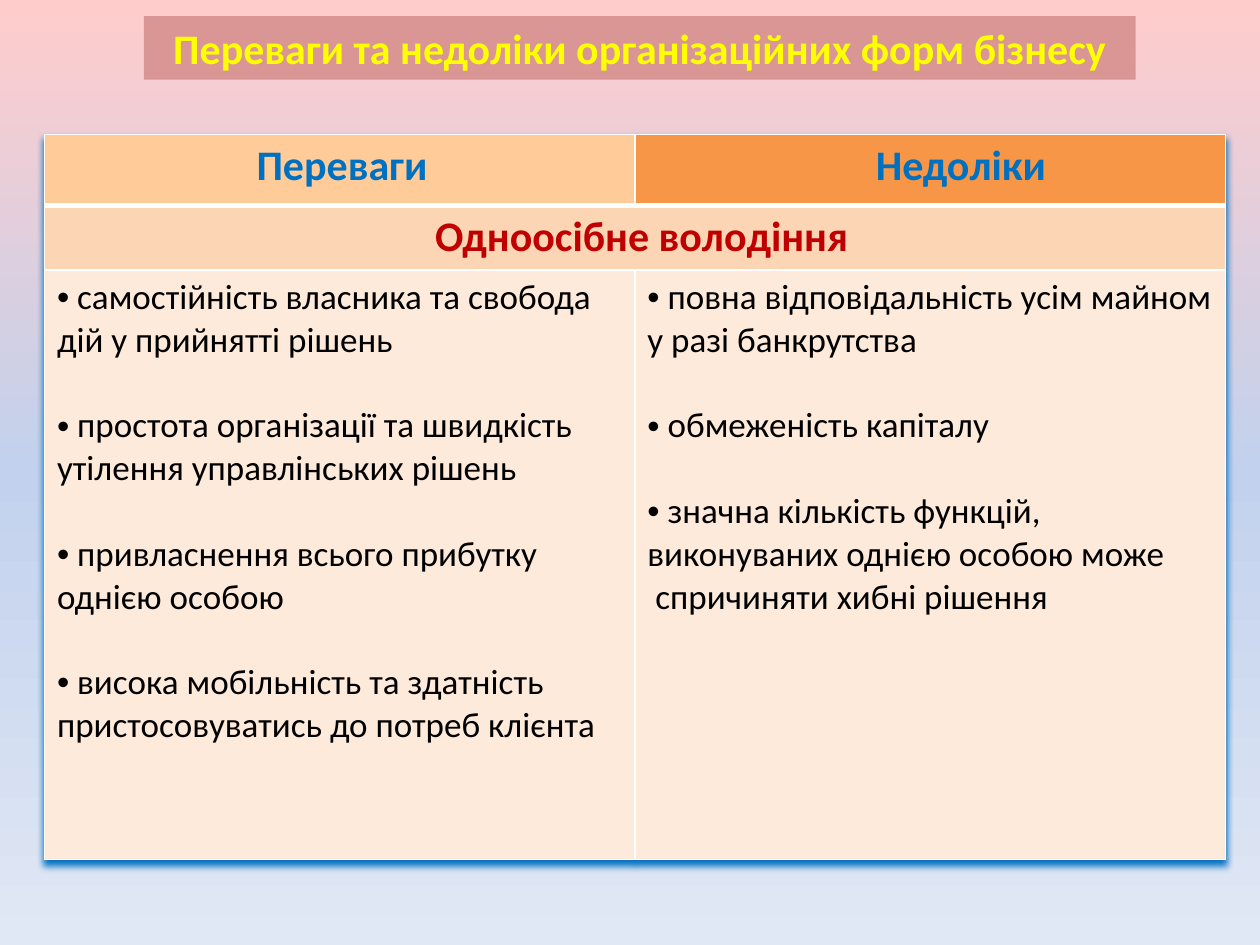
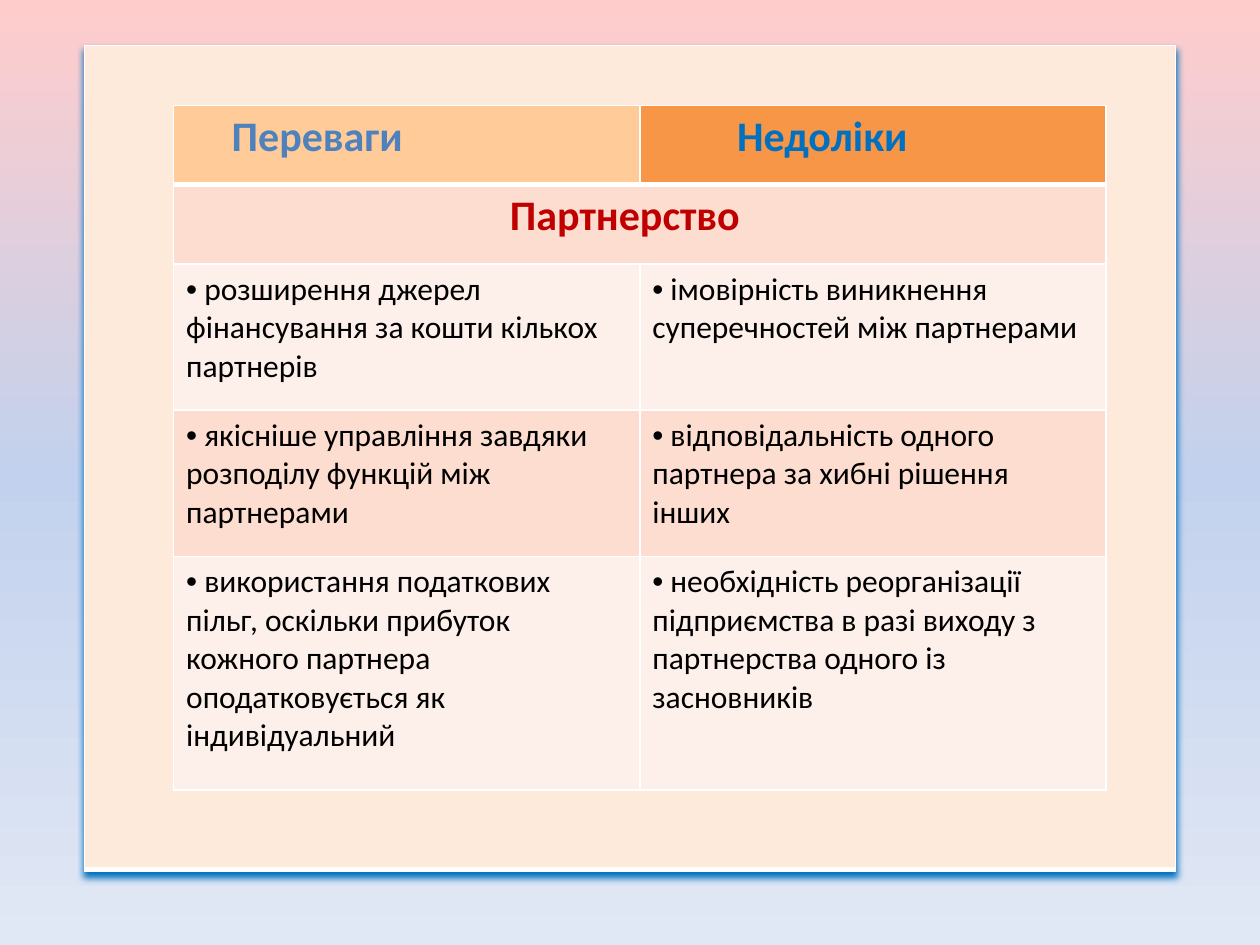
from lxml import etree
from pptx import Presentation
from pptx.dml.color import RGBColor
from pptx.enum.shapes import MSO_SHAPE
from pptx.enum.text import MSO_ANCHOR, PP_ALIGN
from pptx.oxml.ns import qn
from pptx.util import Pt

RECTANGLE = MSO_SHAPE.RECTANGLE
CENTER, MIDDLE = PP_ALIGN.CENTER, MSO_ANCHOR.MIDDLE

# Shared look
FONT = "Calibri"
HEADING_SIZE = 24
COLORS = {
    "title": "FFFF00", "title_band": "D99694",
    "blue": "0070C0", "soft_blue": "4F81BD", "red": "C00000", "text": "000000",
    "pros": "FFCC99", "cons": "F79646", "line": "FFFFFF", "shadow": "0070C0",
    "form": "FCD5B5", "cream": "FDEADA", "rose": "FCDDCF", "pale_rose": "FDEFE9",
}
BACKGROUND_STOPS = [(0, "FFCCCC"), (50, "C2D1ED"), (100, "E1E8F5")]

# Content: headings are (text, colour, indent, fill)
TITLE = "Переваги та недоліки організаційних форм бізнесу"
SOLE_OWNERSHIP = {
    "left": 25.4, "top": 77, "column": 337.4, "rows": [40.4, 36.8, 337],
    "headings": [("Переваги", "blue", 114, "pros"), ("Недоліки", "blue", 130.5, "cons")],
    "form": ("Одноосібне володіння", "red", 216, "form"),
    "size": 20, "bands": ["cream"], "shadow": True,
    "points": [(
        ["самостійність власника та свобода дій у прийнятті рішень",
         "простота організації та швидкість утілення управлінських рішень",
         "привласнення всього прибутку однією особою",
         "висока мобільність та здатність пристосовуватись до потреб клієнта"],
        ["повна відповідальність усім майном у разі банкрутства",
         "обмеженість капіталу",
         "значна кількість функцій, виконуваних однією особою може"],
    )],
    "ending": "спричиняти хибні рішення",
}
PARTNERSHIP = {
    "left": 99.2, "top": 60.4, "column": 266.4, "rows": [45.2, 45.2, 83.6, 83.6, 133.4],
    "headings": [("Переваги", "soft_blue", 26, "pros"), ("Недоліки", "blue", 48.5, "cons")],
    "form": ("Партнерство", "red", 185, "rose"),
    "size": 18, "bands": ["pale_rose", "rose"], "shadow": False,
    "points": [
        (["розширення джерел фінансування за кошти кількох партнерів"],
         ["імовірність виникнення суперечностей між партнерами"]),
        (["якісніше управління завдяки розподілу функцій між партнерами"],
         ["відповідальність одного партнера за хибні рішення інших"]),
        (["використання податкових пільг, оскільки прибуток кожного партнера "
          "оподатковується як індивідуальний"],
         ["необхідність реорганізації підприємства в разі виходу з партнерства "
          "одного із засновників"]),
    ],
}


def rgb(name):
    return RGBColor.from_string(COLORS[name])


def add_color(parent, value):
    fill = etree.SubElement(parent, qn("a:solidFill"))
    etree.SubElement(fill, qn("a:srgbClr"), val=value)


def style(paragraph, size, color, bold=False):
    font = paragraph.font
    font.name, font.size, font.bold = FONT, Pt(size), bold
    font.color.rgb = rgb(color)


def new_slide(prs):
    slide = prs.slides.add_slide(prs.slide_layouts[6])
    fill = slide.background.fill
    fill.gradient()
    fill.gradient_angle = 270
    stops = next(slide.element.iter(qn("a:gsLst")))
    for stop in list(stops):
        stops.remove(stop)
    for percent, value in BACKGROUND_STOPS:
        stop = etree.SubElement(stops, qn("a:gs"), pos=str(percent * 1000))
        etree.SubElement(stop, qn("a:srgbClr"), val=value)
    return slide


def paint_cell(cell, fill, top=1, bottom=1):
    cell.fill.solid()
    cell.fill.fore_color.rgb = rgb(fill)
    properties = cell._tc.get_or_add_tcPr()
    widths = [("a:lnL", 1), ("a:lnR", 1), ("a:lnT", top), ("a:lnB", bottom)]
    for position, (side, width) in enumerate(widths):
        line = etree.Element(qn(side), w=str(Pt(width)))
        add_color(line, COLORS["line"])
        properties.insert(position, line)


def add_grid(slide, left, top, columns, rows, shadow):
    frame = slide.shapes.add_table(len(rows), len(columns), Pt(left), Pt(top),
                                   Pt(sum(columns)), Pt(sum(rows)))
    table = frame.table
    table.first_row = table.horz_banding = False
    for column, width in zip(table.columns, columns):
        column.width = Pt(width)
    for row, height in zip(table.rows, rows):
        row.height = Pt(height)
    if shadow:
        effects = etree.Element(qn("a:effectLst"))
        outer = etree.SubElement(effects, qn("a:outerShdw"), blurRad=str(Pt(4)),
                                 dist=str(Pt(3)), dir="5400000", algn="t", rotWithShape="0")
        etree.SubElement(outer, qn("a:srgbClr"), val=COLORS["shadow"])
        table._tbl.tblPr.insert(0, effects)
    return table


def write_heading(cell, text, color, indent):
    heading = cell.text_frame.paragraphs[0]
    heading.text = text
    heading._p.get_or_add_pPr().set("marL", str(Pt(indent)))
    style(heading, HEADING_SIZE, color, bold=True)


def write_points(cell, points, size):
    frame = cell.text_frame
    for number, text in enumerate(points):
        point = frame.add_paragraph() if number else frame.paragraphs[0]
        point.text = " " + text
        if number:
            point.space_before = Pt(size * 1.22)
        properties = point._p.get_or_add_pPr()
        properties.set("marL", "0")
        properties.set("indent", "0")
        etree.SubElement(properties, qn("a:buFont"), typeface="Arial")
        etree.SubElement(properties, qn("a:buChar"), char="•")
        style(point, size, "text")


def add_comparison(slide, form):
    table = add_grid(slide, form["left"], form["top"], [form["column"]] * 2,
                     form["rows"], form["shadow"])
    # Column headings
    for column, (text, color, indent, fill) in enumerate(form["headings"]):
        write_heading(table.cell(0, column), text, color, indent)
        paint_cell(table.cell(0, column), fill, bottom=3)
    # Business form across both columns
    text, color, indent, fill = form["form"]
    table.cell(1, 0).merge(table.cell(1, 1))
    write_heading(table.cell(1, 0), text, color, indent)
    for column in range(2):
        paint_cell(table.cell(1, column), fill, top=3)
    # Advantages and drawbacks
    for row, pair in enumerate(form["points"]):
        for column, points in enumerate(pair):
            cell = table.cell(row + 2, column)
            write_points(cell, points, form["size"])
            paint_cell(cell, form["bands"][row % len(form["bands"])])
    return table


def add_title(slide):
    band = slide.shapes.add_shape(RECTANGLE, Pt(82.2), Pt(9.2), Pt(566.8), Pt(36.3))
    band.shadow.inherit = False
    band.fill.solid()
    band.fill.fore_color.rgb = rgb("title_band")
    band.line.fill.background()
    frame = band.text_frame
    frame.vertical_anchor = MIDDLE
    frame.word_wrap = True
    title = frame.paragraphs[0]
    title.text, title.alignment = TITLE, CENTER
    style(title, HEADING_SIZE, "title", bold=True)


def main():
    prs = Presentation()
    prs.slide_width, prs.slide_height = Pt(720), Pt(540)

    # Sole ownership
    slide = new_slide(prs)
    add_title(slide)
    table = add_comparison(slide, SOLE_OWNERSHIP)
    ending = table.cell(2, 1).text_frame.add_paragraph()
    ending.text = " " + SOLE_OWNERSHIP["ending"]
    style(ending, SOLE_OWNERSHIP["size"], "text")

    # Partnership on a one-cell panel
    slide = new_slide(prs)
    panel = add_grid(slide, 48.2, 26, [623.6], [470.8], shadow=True)
    paint_cell(panel.cell(0, 0), "cream", bottom=3)
    add_comparison(slide, PARTNERSHIP)

    prs.save("out.pptx")


if __name__ == "__main__":
    main()
